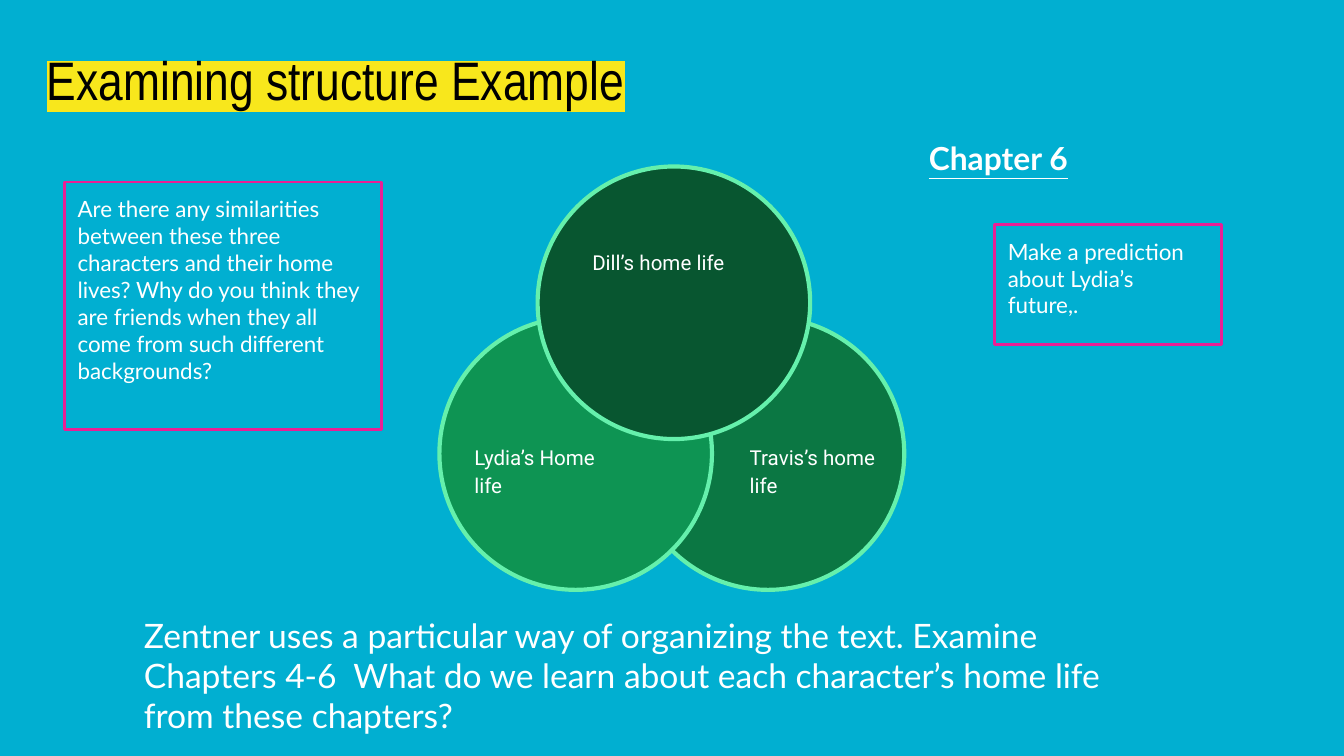
from dataclasses import dataclass

from lxml.etree import SubElement
from pptx import Presentation
from pptx.dml.color import RGBColor as RGB
from pptx.enum.shapes import MSO_SHAPE as Shape
from pptx.enum.text import MSO_ANCHOR as Anchor, PP_ALIGN as Align
from pptx.oxml.ns import qn
from pptx.util import Pt


@dataclass(frozen=True)
class Theme:
    background: str = "01AFD1"
    text: str = "FFFFFF"
    title: str = "000000"
    highlight: str = "F8E71C"
    ring: str = "65F0AC"
    frame: str = "EB1E95"
    title_font: str = "Arial Narrow"
    body_font: str = "Lato"
    label_font: str = "Roboto"
    title_size: float = 29
    body_size: float = 18
    heading_size: float = 17
    prompt_size: float = 12
    label_size: float = 11
    inset: float = 7.2


@dataclass(frozen=True)
class Box:
    left: float
    top: float
    width: float
    height: float

    def emu(self) -> tuple:
        return Pt(self.left), Pt(self.top), Pt(self.width), Pt(self.height)


@dataclass(frozen=True)
class Circle:
    left: float
    top: float
    fill: str
    text: str
    label: Box


@dataclass(frozen=True)
class Prompt:
    text: str
    box: Box


THEME = Theme()
DIAMETER = 146
CIRCLES = [
    Circle(338.4, 170, "0B7743", "Travis’s home life", Box(394.5, 231, 85, 41)),
    Circle(235.4, 170, "0E9453", "Lydia’s Home life", Box(247, 231, 85, 41)),
    Circle(288, 89.2, "085630", "Dill’s home life", Box(310.2, 119, 101.5, 41)),
]
PROMPTS = [
    Prompt(
        "Are there any similarities between these three characters and their "
        "home lives? Why do you think they are friends when they all come "
        "from such different backgrounds?",
        Box(34.5, 97.5, 169.8, 132.5),
    ),
    Prompt("Make a prediction about Lydia’s future,.", Box(532.8, 120.2, 121.7, 64.2)),
]


def write(sp, text: str, font: str, size: float, color: str = THEME.text,
          anchor=Anchor.TOP, spacing: float = 1.0):
    tf = sp.text_frame
    tf.word_wrap = True
    tf.vertical_anchor = anchor
    tf.margin_left = tf.margin_right = Pt(THEME.inset)
    tf.margin_top = tf.margin_bottom = Pt(THEME.inset)
    p = tf.paragraphs[0]
    p.alignment = Align.LEFT
    p.line_spacing = spacing
    p.font.name = font
    p.font.size = Pt(size)
    p.font.color.rgb = RGB.from_string(color)
    p.add_run().text = text
    return p


def outline(sp, color: str, width: float) -> None:
    sp.shadow.inherit = False
    sp.line.color.rgb = RGB.from_string(color)
    sp.line.width = Pt(width)


def draw_title(s, text: str, box: Box) -> None:
    p = write(s.shapes.add_textbox(*box.emu()), text, THEME.title_font,
              THEME.title_size, THEME.title, Anchor.MIDDLE, 0.83)
    highlight = SubElement(p.runs[0].font._element, qn("a:highlight"))
    SubElement(highlight, qn("a:srgbClr"), val=THEME.highlight)


def draw_circle(s, circle: Circle) -> None:
    group = s.shapes.add_group_shape()
    box = Box(circle.left, circle.top, DIAMETER, DIAMETER)
    sp = group.shapes.add_shape(Shape.OVAL, *box.emu())
    sp.fill.solid()
    sp.fill.fore_color.rgb = RGB.from_string(circle.fill)
    outline(sp, THEME.ring, 2.25)
    write(group.shapes.add_textbox(*circle.label.emu()), circle.text,
          THEME.label_font, THEME.label_size, anchor=Anchor.MIDDLE, spacing=1.15)


def draw_prompt(s, prompt: Prompt) -> None:
    sp = s.shapes.add_shape(Shape.RECTANGLE, *prompt.box.emu())
    sp.fill.background()
    outline(sp, THEME.frame, 1.5)
    write(sp, prompt.text, THEME.body_font, THEME.prompt_size)


def main() -> None:
    prs = Presentation()
    prs.slide_width, prs.slide_height = Pt(720), Pt(405)
    s = prs.slides.add_slide(prs.slide_layouts[6])
    s.background.fill.solid()
    s.background.fill.fore_color.rgb = RGB.from_string(THEME.background)

    draw_title(s, "Examining structure Example", Box(18, 17.5, 592.5, 55.5))
    write(
        s.shapes.add_textbox(*Box(70, 322, 553, 83).emu()),
        "Zentner uses a particular way of organizing the text. Examine Chapters "
        "4-6  What do we learn about each character’s home life from these chapters?",
        THEME.body_font, THEME.body_size,
    )
    for circle in CIRCLES:
        draw_circle(s, circle)
    for prompt in PROMPTS:
        draw_prompt(s, prompt)
    heading = write(s.shapes.add_textbox(*Box(490.5, 67, 137, 31.5).emu()),
                    "Chapter 6", THEME.body_font, THEME.heading_size)
    heading.font.bold = True
    heading.font.underline = True
    prs.save("out.pptx")


if __name__ == "__main__":
    main()
